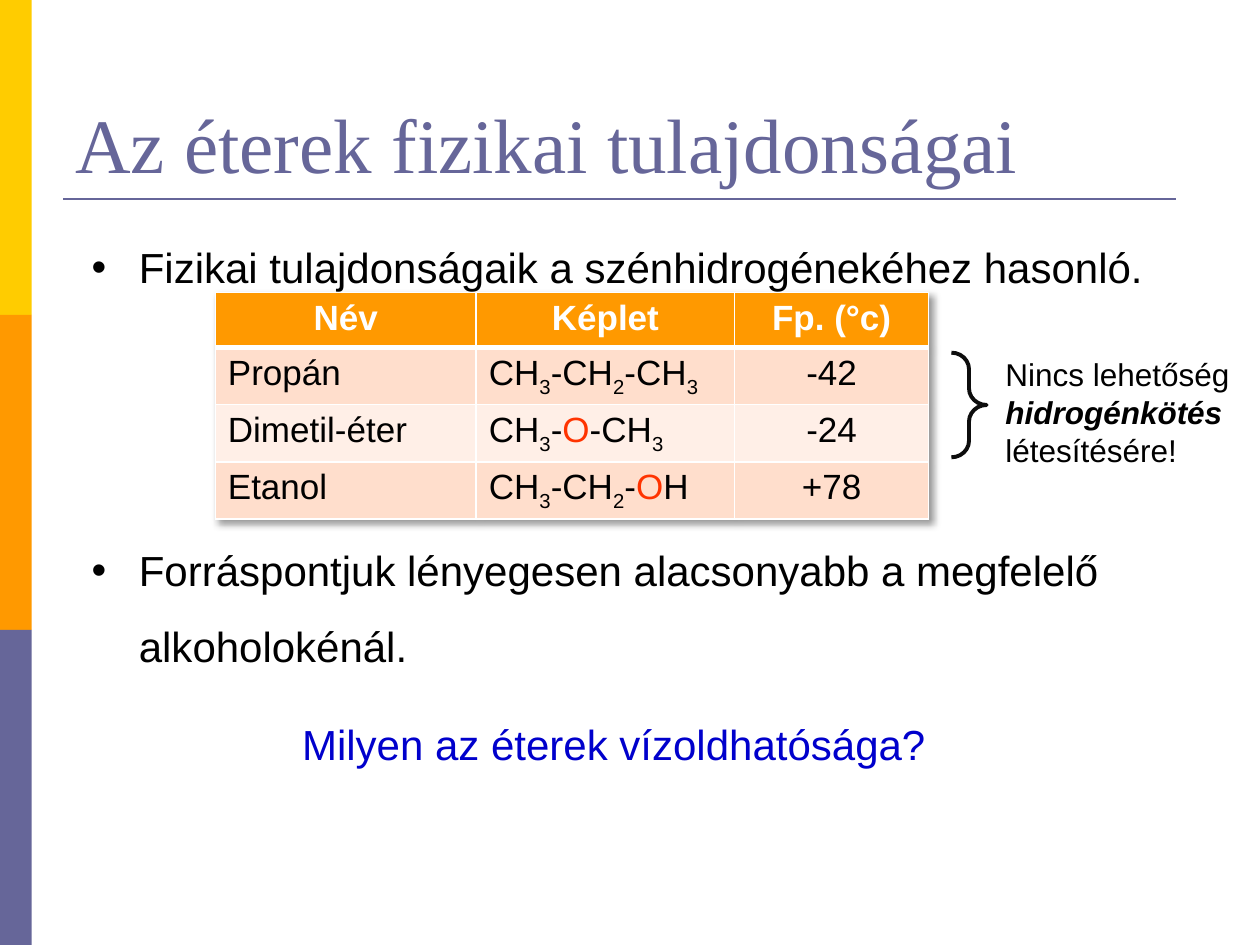
from dataclasses import dataclass
from itertools import groupby

from lxml.etree import SubElement
from pptx import Presentation
from pptx.dml.color import RGBColor
from pptx.enum.shapes import MSO_CONNECTOR, MSO_SHAPE
from pptx.enum.text import MSO_ANCHOR, MSO_AUTO_SIZE, PP_ALIGN
from pptx.oxml import parse_xml
from pptx.oxml.ns import nsdecls, qn
from pptx.util import Cm, Pt


@dataclass(frozen=True)
class Theme:
    heading_font: str = "Times New Roman"
    body_font: str = "Arial"
    title_size: int = 44
    body_size: int = 24
    table_size: int = 20
    note_size: int = 18
    violet: str = "666699"
    orange: str = "FF9900"
    yellow: str = "FFCC00"
    black: str = "000000"
    white: str = "FFFFFF"
    blue: str = "0000CC"
    red: str = "FF3300"
    brace: str = "0D0D0D"
    row_fills: tuple = ("FFDECC", "FFEFE7")


THEME = Theme()
HEADER = ("Név", "Képlet", "Fp. (°c)")
COMPOUNDS = (
    ("Propán", "CH3-CH2-CH3", "-42"),
    ("Dimetil-éter", "CH3-O-CH3", "-24"),
    ("Etanol", "CH3-CH2-OH", "+78"),
)


def rgb(color):
    return RGBColor.from_string(color)


def add_span(para, text, size=THEME.body_size, color=THEME.black,
             font=THEME.body_font, bold=False, italic=False, subscript=False):
    span = para.add_run()
    span.text = text
    span.font.name = font
    span.font.size = Pt(size)
    span.font.bold = bold
    span.font.italic = italic
    span.font.color.rgb = rgb(color)
    if subscript:
        span.font._element.set("baseline", "-25000")


def add_box(page, left, top, width, height, wrap=True, anchor=MSO_ANCHOR.TOP):
    box = page.shapes.add_textbox(Cm(left), Cm(top), Cm(width), Cm(height))
    frame = box.text_frame
    frame.word_wrap = wrap
    frame.auto_size = MSO_AUTO_SIZE.NONE
    frame.vertical_anchor = anchor
    return frame


def add_bullet(para, text, space_before=0):
    properties = para._p.get_or_add_pPr()
    properties.set("marL", str(Cm(0.95)))
    properties.set("indent", str(-Cm(0.95)))
    SubElement(properties, qn("a:buFont"), typeface=THEME.body_font)
    SubElement(properties, qn("a:buChar"), char="•")
    para.line_spacing = 1.5
    para.space_before = Pt(space_before)
    add_span(para, text)


def add_formula(para, formula):
    """Digits become subscripts and oxygen is highlighted."""
    for (is_digit, is_oxygen), letters in groupby(
            formula, key=lambda letter: (letter.isdigit(), letter == "O")):
        add_span(para, "".join(letters), size=THEME.table_size,
                 color=THEME.red if is_oxygen else THEME.black,
                 subscript=is_digit)


def add_band(page, top, height, color):
    band = page.shapes.add_shape(MSO_SHAPE.RECTANGLE, 0, Cm(top), Cm(0.64), Cm(height))
    band.shadow.inherit = False
    band.fill.solid()
    band.fill.fore_color.rgb = rgb(color)
    band.line.fill.background()


def add_rule(page, left, right, y):
    rule = page.shapes.add_connector(
        MSO_CONNECTOR.STRAIGHT, Cm(left), Cm(y), Cm(right), Cm(y))
    rule.line.color.rgb = rgb(THEME.violet)
    rule.line.width = Pt(1.5)
    SubElement(rule._element.spPr, qn("a:effectLst"))


def style_cell(cell, fill, top=1, bottom=1):
    properties = cell._tc.get_or_add_tcPr()
    for side, width in (("L", 1), ("R", 1), ("T", top), ("B", bottom)):
        properties.append(parse_xml(
            f'<a:ln{side} {nsdecls("a")} w="{Pt(width)}"><a:solidFill>'
            f'<a:srgbClr val="{THEME.white}"/></a:solidFill></a:ln{side}>'))
    cell.fill.solid()
    cell.fill.fore_color.rgb = rgb(fill)


def add_table_shadow(table):
    table._tbl.tblPr.insert(0, parse_xml(
        f'<a:effectLst {nsdecls("a")}><a:outerShdw blurRad="50800" dist="38100" '
        'dir="2700000" algn="tl" rotWithShape="0"><a:srgbClr val="000000">'
        '<a:alpha val="40000"/></a:srgbClr></a:outerShdw></a:effectLst>'))


def add_compound_table(page):
    widths = (5.26, 5.21, 3.91)
    row_height = 1.1
    row_count = len(COMPOUNDS) + 1
    table = page.shapes.add_table(
        row_count, len(HEADER), Cm(4.34), Cm(5.9),
        Cm(sum(widths)), Cm(row_height * row_count)).table
    add_table_shadow(table)
    for column, width in zip(table.columns, widths):
        column.width = Cm(width)

    for row, values in enumerate((HEADER, *COMPOUNDS)):
        for column, value in enumerate(values):
            cell = table.cell(row, column)
            para = cell.text_frame.paragraphs[0]
            if row == 0 or column == 2:
                para.alignment = PP_ALIGN.CENTER
            if row == 0:
                style_cell(cell, THEME.orange, bottom=3)
                add_span(para, value, size=THEME.table_size, color=THEME.white, bold=True)
                continue
            style_cell(cell, THEME.row_fills[(row - 1) % 2], top=3 if row == 1 else 1)
            if column == 1:
                add_formula(para, value)
            else:
                add_span(para, value, size=THEME.table_size)


def add_brace(page, left, top, width, height):
    brace = page.shapes.add_shape(
        MSO_SHAPE.RIGHT_BRACE, Cm(left), Cm(top), Cm(width), Cm(height))
    brace.adjustments[0] = 0.47
    brace.adjustments[1] = 0.5
    brace.shadow.inherit = False
    brace.fill.background()
    brace.line.color.rgb = rgb(THEME.brace)
    brace.line.width = Pt(2.25)


def main():
    deck = Presentation()
    deck.slide_width, deck.slide_height = Cm(25.4), Cm(19.05)
    page = deck.slides.add_slide(deck.slide_layouts[6])

    # Side bands and title rule
    band_height = 19.05 / 3
    for index, color in enumerate((THEME.yellow, THEME.orange, THEME.violet)):
        add_band(page, index * band_height, band_height, color)
    add_rule(page, 1.27, 23.7, 4.01)

    # Title
    title = add_box(page, 1.27, 0.76, 23.37, 3.18, anchor=MSO_ANCHOR.BOTTOM)
    add_span(title.paragraphs[0], "Az éterek fizikai tulajdonságai",
             size=THEME.title_size, color=THEME.violet, font=THEME.heading_font)

    # Statements above and below the table
    body = add_box(page, 1.6, 4.24, 22.71, 9.5)
    add_bullet(body.paragraphs[0], "Fizikai tulajdonságaik a szénhidrogénekéhez hasonló.")
    add_bullet(body.add_paragraph(),
               "Forráspontjuk lényegesen alacsonyabb a megfelelő alkoholokénál.",
               space_before=130)

    # Closing question
    question = add_box(page, 5.84, 14.35, 13.21, 1.27, wrap=False)
    add_span(question.paragraphs[0], "Milyen az éterek vízoldhatósága?", color=THEME.blue)

    # Boiling points with the bracketed remark
    add_compound_table(page)
    note = add_box(page, 20.02, 7.04, 5.21, 2.64).paragraphs[0]
    add_span(note, "Nincs lehetőség ", size=THEME.note_size)
    add_span(note, "hidrogénkötés ", size=THEME.note_size, bold=True, italic=True)
    add_span(note, "létesítésére!", size=THEME.note_size)
    add_brace(page, 19.18, 7.11, 0.71, 2.11)

    deck.save("out.pptx")


if __name__ == "__main__":
    main()
